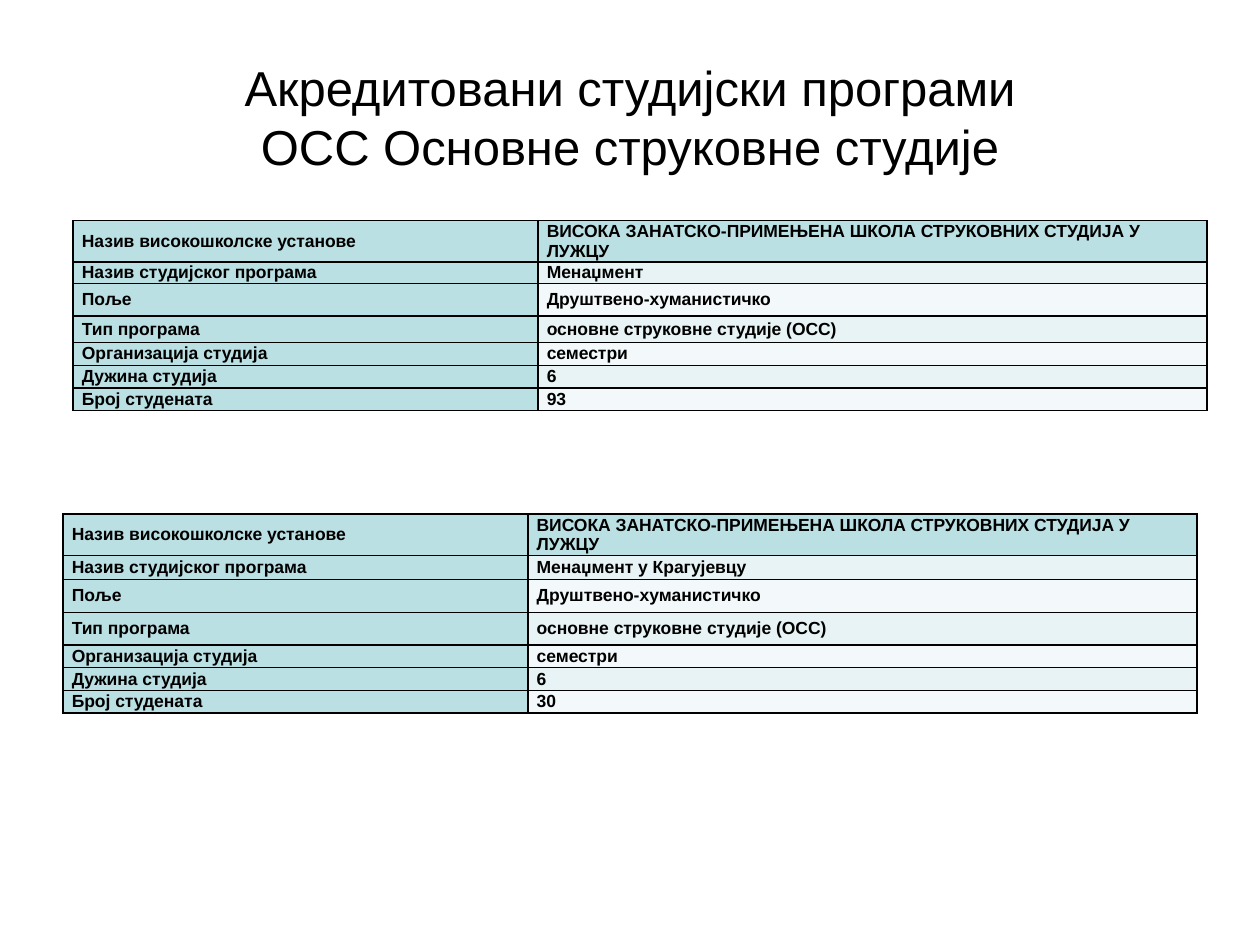
from dataclasses import dataclass

from lxml.etree import SubElement
from pptx import Presentation
from pptx.dml.color import RGBColor as RGB
from pptx.enum.text import MSO_ANCHOR as Anchor, MSO_AUTO_SIZE as AutoSize, PP_ALIGN as Align
from pptx.oxml.ns import qn
from pptx.util import Inches, Pt


@dataclass(frozen=True)
class Theme:
    font: str = "Arial"
    ink: str = "000000"
    label: str = "BBE0E3"
    odd: str = "E7F3F4"
    even: str = "F3F9FA"
    title_size: int = 28
    cell_size: int = 10
    border: int = 1


theme = Theme()


def write(frame, text, size, bold=False, align=Align.LEFT):
    paragraph = frame.paragraphs[0]
    paragraph.text = text
    paragraph.alignment = align
    for run in paragraph.runs:
        run.font.name = theme.font
        run.font.size = Pt(size)
        run.font.bold = bold
        run.font.color.rgb = RGB.from_string(theme.ink)


def style_cell(cell, fill):
    cell.vertical_anchor = Anchor.MIDDLE
    cell.margin_left = cell.margin_right = Inches(0.07)
    cell.margin_top = cell.margin_bottom = 0
    properties = cell._tc.get_or_add_tcPr()
    for side in ("lnL", "lnR", "lnT", "lnB"):
        line = SubElement(properties, qn(f"a:{side}"), w=str(Pt(theme.border)))
        solid = SubElement(line, qn("a:solidFill"))
        SubElement(solid, qn("a:srgbClr"), val=theme.ink)
    cell.fill.solid()
    cell.fill.fore_color.rgb = RGB.from_string(fill)


deck = Presentation()
deck.slide_width, deck.slide_height = Inches(10), Inches(7.5)
slide = deck.slides.add_slide(deck.slide_layouts[5])

heading = slide.shapes.title
heading.left, heading.top = Inches(0.5), Inches(0.3)
heading.width, heading.height = Inches(9), Inches(1.25)
heading.text_frame.auto_size = AutoSize.NONE
heading.text_frame.vertical_anchor = Anchor.MIDDLE
write(heading.text_frame, "Акредитовани студијски програми\vОСС Основне струковне студије",
      size=theme.title_size, align=Align.CENTER)

labels = ["Назив високошколске установе", "Назив студијског програма", "Поље", "Тип програма",
          "Организација студија", "Дужина студија", "Број студената"]
school = "ВИСОКА ЗАНАТСКО-ПРИМЕЊЕНА ШКОЛА СТРУКОВНИХ СТУДИЈА У ЛУЖЦУ"
shared = ["Друштвено-хуманистичко", "основне струковне студије (ОСС)", "семестри", "6"]
column_widths = [3.69, 5.31]
programs = [
    ("Mенаџмент", "93", 0.58, 1.75, [0.33, 0.17, 0.26, 0.21, 0.18, 0.18, 0.18]),
    ("Mенаџмент у Крагујевцу", "30", 0.5, 4.08, [0.33, 0.19, 0.26, 0.26, 0.18, 0.18, 0.18]),
]

for program, students, left, top, row_heights in programs:
    values = [school, program, *shared, students]
    details = slide.shapes.add_table(
        len(labels), len(column_widths), Inches(left), Inches(top),
        Inches(sum(column_widths)), Inches(sum(row_heights))).table
    for column, width in zip(details.columns, column_widths):
        column.width = Inches(width)
    for index, (height, label, value) in enumerate(zip(row_heights, labels, values)):
        details.rows[index].height = Inches(height)
        band = theme.label if index == 0 else theme.odd if index % 2 else theme.even
        for column, (text, fill) in enumerate([(label, theme.label), (value, band)]):
            cell = details.cell(index, column)
            style_cell(cell, fill)
            write(cell.text_frame, text, size=theme.cell_size, bold=True)

deck.save("out.pptx")
